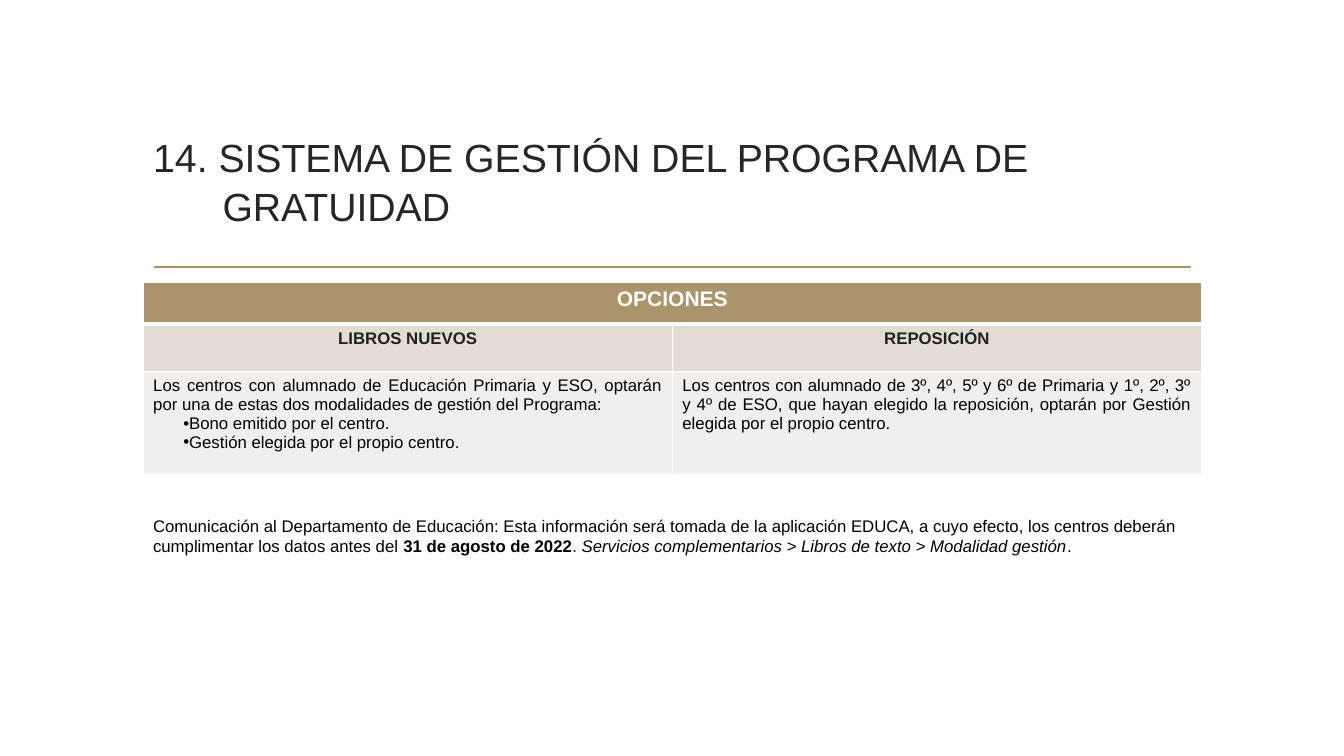
"""Build the slide on management options of the free textbook programme."""
from lxml.etree import SubElement
from pptx import Presentation
from pptx.dml.color import RGBColor
from pptx.enum.shapes import MSO_CONNECTOR as Connector
from pptx.enum.text import MSO_ANCHOR as Anchor, PP_ALIGN as Align
from pptx.oxml.ns import qn
from pptx.util import Pt

TITLE = "14. SISTEMA DE GESTIÓN DEL PROGRAMA DE GRATUIDAD"
HEADING = "OPCIONES"
OPTIONS = ["LIBROS NUEVOS", "REPOSICIÓN"]
DETAILS = [
    ["Los centros con alumnado de Educación Primaria y ESO, optarán por una de estas "
     "dos modalidades de gestión del Programa:",
     "Bono emitido por el centro.",
     "Gestión elegida por el propio centro."],
    ["Los centros con alumnado de 3º, 4º, 5º y 6º de Primaria y 1º, 2º, 3º y 4º de ESO, "
     "que hayan elegido la reposición, optarán por Gestión elegida por el propio centro."],
]
NOTICE = [
    ("Comunicación al Departamento de Educación: Esta información será tomada de la "
     "aplicación EDUCA, a cuyo efecto, los centros deberán cumplimentar los datos "
     "antes del ", False, False),
    ("31 de agosto de 2022", True, False),
    (". ", False, False),
    ("Servicios complementarios > Libros de texto > Modalidad gestión", False, True),
    (".", False, False),
]

FONT = "Arial"
GOLD = RGBColor(0xAB, 0x94, 0x6B)
SAND = RGBColor(0xE2, 0xDC, 0xD4)
CREAM = RGBColor(0xF1, 0xEE, 0xEB)
WHITE = RGBColor(0xFF, 0xFF, 0xFF)
CHARCOAL = RGBColor(0x26, 0x26, 0x26)
DARK = RGBColor(0x21, 0x21, 0x21)
BLACK = RGBColor(0, 0, 0)

LEFT, WIDTH = 102.24, 756
ROW_HEIGHTS = [29.5, 34, 74]


def format_font(font, size, color, bold=False, italic=False):
    font.name, font.size, font.bold, font.italic = FONT, Pt(size), bold, italic
    font.color.rgb = color


def set_indent(para, margin, indent):
    props = para._p.get_or_add_pPr()
    props.set("marL", str(Pt(margin)))
    props.set("indent", str(Pt(indent)))
    return props


def set_borders(cell, bottom, top):
    props = cell._tc.get_or_add_tcPr()
    for tag, width in (("a:lnL", 1), ("a:lnR", 1), ("a:lnT", top), ("a:lnB", bottom)):
        line = SubElement(props, qn(tag), w=str(Pt(width)))
        fill = SubElement(line, qn("a:solidFill"))
        SubElement(fill, qn("a:srgbClr"), val=str(WHITE))


def fill_cell(cell, lines, align, size, color, bold):
    cell.text_frame.text = "\n".join(lines)
    for index, para in enumerate(cell.text_frame.paragraphs):
        para.alignment = align
        if index:
            props = set_indent(para, 13.5, 8)
            SubElement(props, qn("a:buFont"), typeface=FONT)
            SubElement(props, qn("a:buChar"), char="•")
        for span in para.runs:
            format_font(span.font, size, color, bold)


def add_title(page):
    title = page.shapes.title
    title.left, title.top, title.width, title.height = Pt(LEFT), Pt(77), Pt(WIDTH), Pt(103)
    title.text_frame.text = TITLE
    title.text_frame.vertical_anchor = Anchor.MIDDLE
    para = title.text_frame.paragraphs[0]
    para.alignment = Align.LEFT
    para.line_spacing = 1.05
    set_indent(para, 49.5, -49.5)
    format_font(para.runs[0].font, 28, CHARCOAL)


def add_rule(page):
    rule = page.shapes.add_connector(Connector.STRAIGHT, Pt(110), Pt(190.8), Pt(850.5), Pt(190.8))
    rule.line.color.rgb = GOLD
    rule.line.width = Pt(1.25)
    SubElement(rule._element.spPr, qn("a:effectLst"))


def add_options(page):
    frame = page.shapes.add_table(3, 2, Pt(LEFT), Pt(201.75), Pt(WIDTH), Pt(sum(ROW_HEIGHTS)))
    table = frame.table
    table.first_row = table.horz_banding = False
    for row, height in zip(table.rows, ROW_HEIGHTS):
        row.height = Pt(height)
    for row, color in enumerate([GOLD, SAND, CREAM]):
        for column in range(2):
            cell = table.cell(row, column)
            set_borders(cell, 1 if row else 3, 3 if row == 1 else 1)
            cell.fill.solid()
            cell.fill.fore_color.rgb = color
    table.cell(0, 0).merge(table.cell(0, 1))
    fill_cell(table.cell(0, 0), [HEADING], Align.CENTER, 15, WHITE, True)
    for column, (option, lines) in enumerate(zip(OPTIONS, DETAILS)):
        fill_cell(table.cell(1, column), [option], Align.CENTER, 12, DARK, True)
        fill_cell(table.cell(2, column), lines, Align.JUSTIFY, 12, BLACK, False)


def add_notice(page):
    box = page.shapes.add_textbox(Pt(LEFT), Pt(365), Pt(WIDTH), Pt(58))
    box.text_frame.word_wrap = True
    para = box.text_frame.paragraphs[0]
    for text, bold, italic in NOTICE:
        span = para.add_run()
        span.text = text
        format_font(span.font, 12, BLACK, bold, italic)


def main():
    deck = Presentation()
    deck.slide_width, deck.slide_height = Pt(960), Pt(540)
    page = deck.slides.add_slide(deck.slide_layouts[5])
    add_rule(page)
    add_title(page)
    add_options(page)
    add_notice(page)
    deck.save("out.pptx")


if __name__ == "__main__":
    main()
